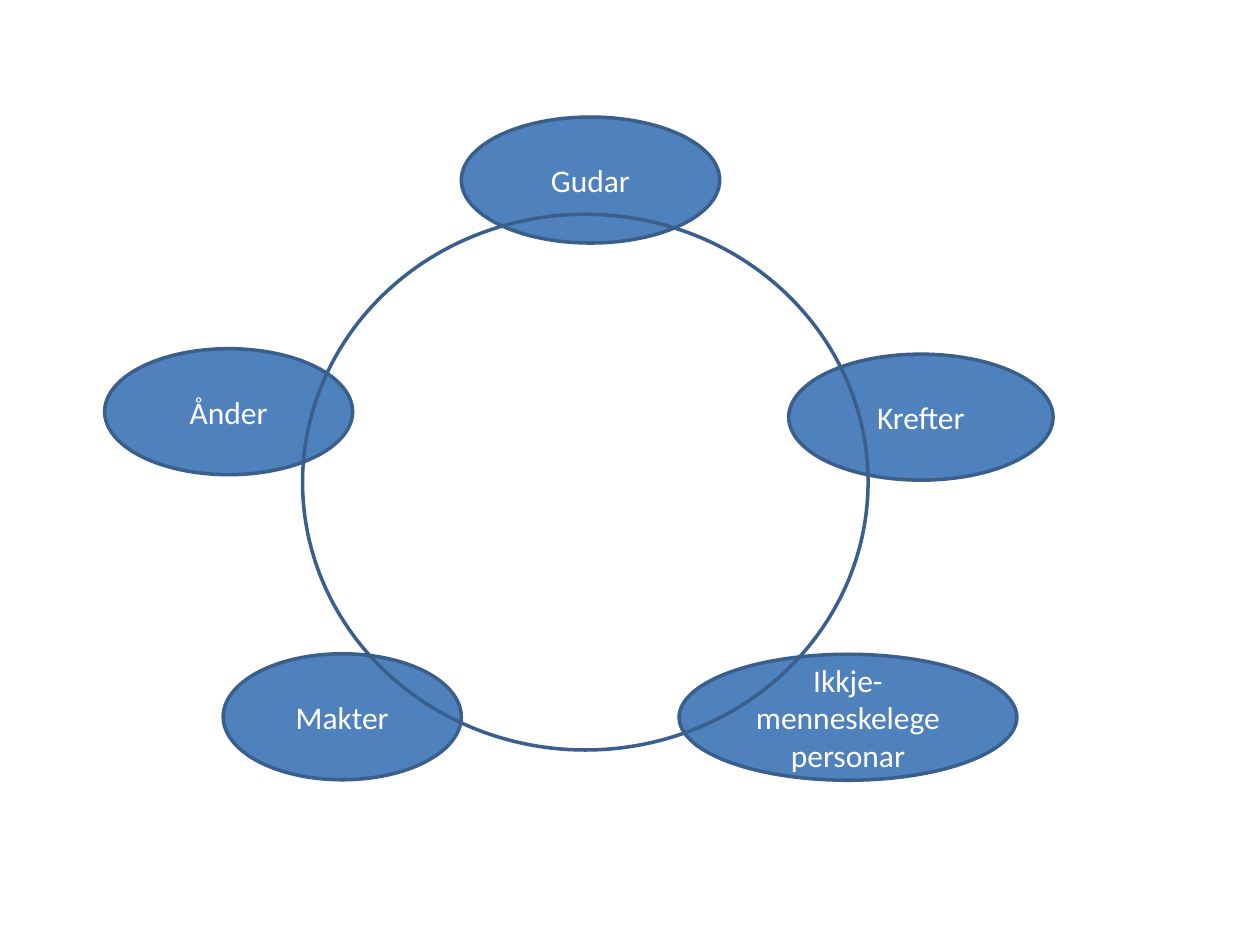
from dataclasses import dataclass

from pptx import Presentation
from pptx.dml.color import RGBColor
from pptx.enum.shapes import MSO_SHAPE
from pptx.enum.text import MSO_ANCHOR, PP_ALIGN
from pptx.util import Cm, Pt

OVAL = MSO_SHAPE.OVAL
MIDDLE = MSO_ANCHOR.MIDDLE
CENTER = PP_ALIGN.CENTER
BLANK_LAYOUT = 6


@dataclass(frozen=True)
class Theme:
    fill: RGBColor = RGBColor(0x4F, 0x81, 0xBD)
    outline: RGBColor = RGBColor(0x3A, 0x5F, 0x8C)
    text: RGBColor = RGBColor(0xFF, 0xFF, 0xFF)
    font: str = "Calibri"
    size: int = 18
    line_width: int = 2


THEME = Theme()
LABEL_HEIGHT = 2.54

# Label, left, top and width in centimetres
LABELS = [
    ("Gudar", 9.3, 2.36, 5.21),
    ("Ånder", 2.11, 7.03, 5.0),
    ("Krefter", 15.9, 7.14, 5.33),
    ("Ikkje-menneskelege personar", 13.69, 13.19, 6.81),
    ("Makter", 4.5, 13.18, 4.8),
]
RING = (6.1, 4.32, 11.4, 10.8)


def write_text(shape, text, *, size=THEME.size, color=THEME.text,
               font=THEME.font, align=CENTER, anchor=MIDDLE):
    frame = shape.text_frame
    frame.word_wrap = True
    frame.vertical_anchor = anchor
    para = frame.paragraphs[0]
    para.alignment = align
    span = para.add_run()
    span.text = text
    span.font.name = font
    span.font.size = Pt(size)
    span.font.color.rgb = color


def add_oval(page, left, top, width, height, fill=None):
    oval = page.shapes.add_shape(OVAL, Cm(left), Cm(top), Cm(width), Cm(height))
    oval.shadow.inherit = False
    if fill is None:
        oval.fill.background()
    else:
        oval.fill.solid()
        oval.fill.fore_color.rgb = fill
    oval.line.color.rgb = THEME.outline
    oval.line.width = Pt(THEME.line_width)
    return oval


def main():
    deck = Presentation()
    deck.slide_width, deck.slide_height = Cm(25.4), Cm(19.05)
    page = deck.slides.add_slide(deck.slide_layouts[BLANK_LAYOUT])

    # Labelled ovals
    for text, left, top, width in LABELS:
        oval = add_oval(page, left, top, width, LABEL_HEIGHT, THEME.fill)
        write_text(oval, text)

    # Ring that joins the labels, drawn on top
    add_oval(page, *RING)

    deck.save("out.pptx")


if __name__ == "__main__":
    main()
